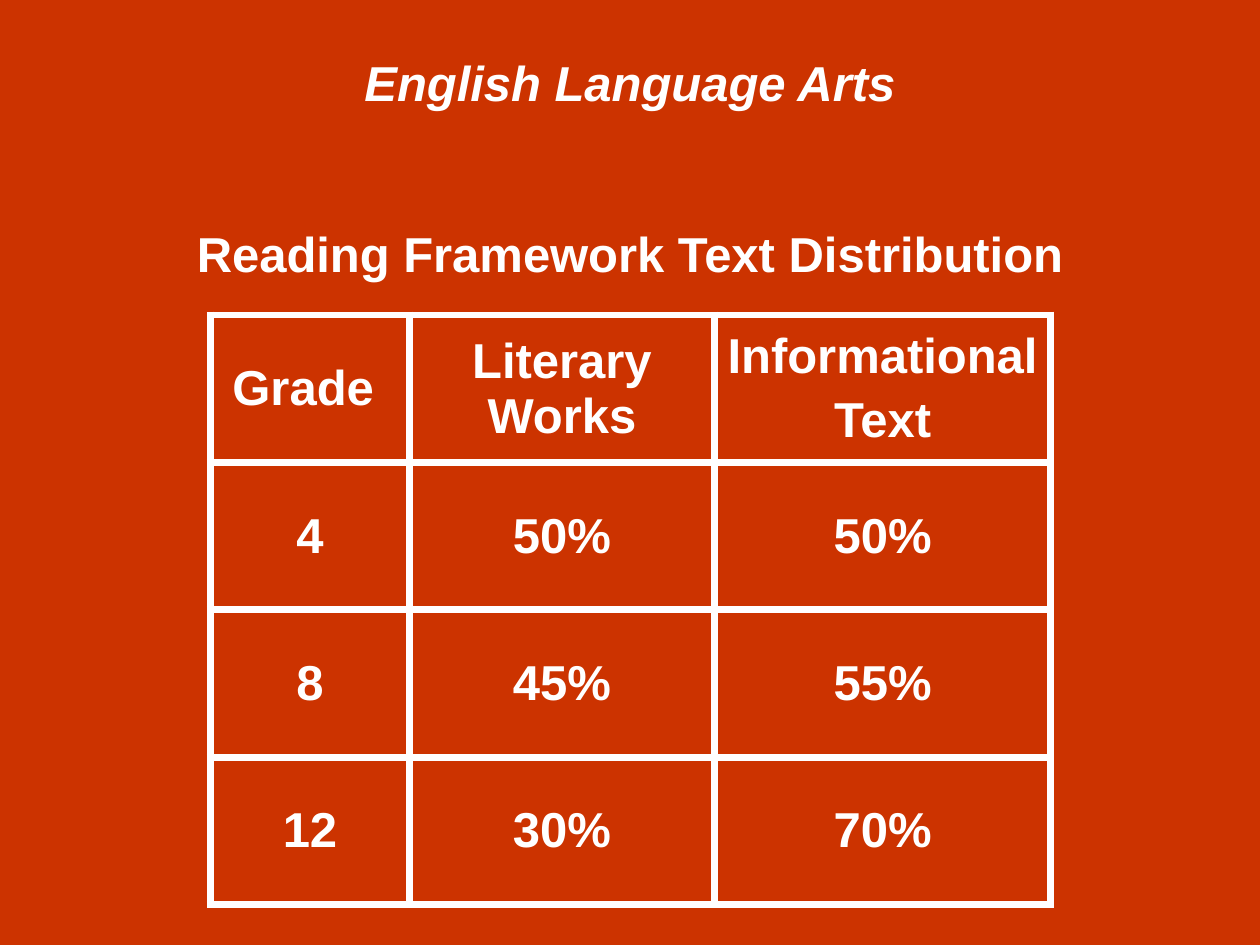
from dataclasses import dataclass

from lxml.etree import SubElement
from pptx import Presentation
from pptx.dml.color import RGBColor
from pptx.enum.text import MSO_ANCHOR as Anchor, MSO_AUTO_SIZE as AutoSize, PP_ALIGN as Align
from pptx.oxml.ns import qn
from pptx.util import Inches, Pt


@dataclass(frozen=True)
class Theme:
    """Colours, type and line sizes of the slide."""
    background: str = "CC3300"
    ink: str = "FFFFFF"
    font: str = "Arial"
    size: float = 28
    border: float = 4.5
    heading_gap: float = 63.6
    cell_gap: float = 5.6


def apply(target, formats):
    """Set each attribute named in formats on the target."""
    for name, value in formats.items():
        setattr(target, name, value)


class SlideBuilder:
    """Holds the theme and the current slide."""

    def __init__(self, presentation, theme):
        self.theme = theme
        self.slide = presentation.slides.add_slide(presentation.slide_layouts[5])
        fill = self.slide.background.fill
        fill.solid()
        fill.fore_color.rgb = RGBColor.from_string(theme.background)

    def style(self, paragraph, gap, italic=False):
        """Centre a paragraph and give its text the theme type."""
        apply(paragraph, {"alignment": Align.CENTER, "space_before": Pt(gap)})
        for run in paragraph.runs:
            apply(run.font, {"name": self.theme.font, "size": Pt(self.theme.size),
                             "bold": True, "italic": italic})
            run.font.color.rgb = RGBColor.from_string(self.theme.ink)

    def title(self, subject, heading, box):
        """Fill the title placeholder with the subject and the table heading."""
        title = self.slide.shapes.title
        apply(title, dict(zip(("left", "top", "width", "height"), map(Inches, box))))
        frame = title.text_frame
        apply(frame, {"text": f"{subject}\n{heading}", "vertical_anchor": Anchor.TOP,
                      "auto_size": AutoSize.NONE, "word_wrap": True,
                      "margin_top": Inches(0.09)})
        self.style(frame.paragraphs[0], 0, italic=True)
        self.style(frame.paragraphs[1], self.theme.heading_gap)

    def borders(self, cell):
        """Draw a solid line on every side of a cell."""
        properties = cell._tc.get_or_add_tcPr()
        for position, side in enumerate(("lnL", "lnR", "lnT", "lnB")):
            line = SubElement(properties, qn(f"a:{side}"), w=str(Pt(self.theme.border)))
            properties.insert(position, line)
            solid = SubElement(line, qn("a:solidFill"))
            SubElement(solid, qn("a:srgbClr"), val=self.theme.ink)

    def table(self, rows, left, top, widths, row_height):
        """Add a bordered table of centred text."""
        table = self.slide.shapes.add_table(
            len(rows), len(widths), Inches(left), Inches(top),
            Inches(sum(widths)), Inches(row_height * len(rows))).table
        apply(table, {"first_row": False, "horz_banding": False})
        for column, width in zip(table.columns, widths):
            column.width = Inches(width)
        for table_row, texts in zip(table.rows, rows):
            table_row.height = Inches(row_height)
            for cell, text in zip(table_row.cells, texts):
                apply(cell, {"text": text, "vertical_anchor": Anchor.MIDDLE,
                             "margin_left": Inches(0.05), "margin_right": Inches(0.05)})
                cell.fill.background()
                self.borders(cell)
                for paragraph in cell.text_frame.paragraphs:
                    self.style(paragraph, self.theme.cell_gap)


def main():
    """Build and save the slide."""
    presentation = Presentation()
    apply(presentation, {"slide_width": Inches(10), "slide_height": Inches(7.5)})
    builder = SlideBuilder(presentation, Theme())
    builder.title("English Language Arts", "Reading Framework Text Distribution",
                  (0.5, 0.33, 9, 1.97))
    distribution = [
        ("Grade ", "Literary Works", "Informational\nText"),
        ("4", "50%", "50%"),
        ("8", "45%", "55%"),
        ("12", "30%", "70%"),
    ]
    builder.table(distribution, 1.67, 2.5, (1.58, 2.42, 2.67), 1.17)
    presentation.save("out.pptx")


if __name__ == "__main__":
    main()
